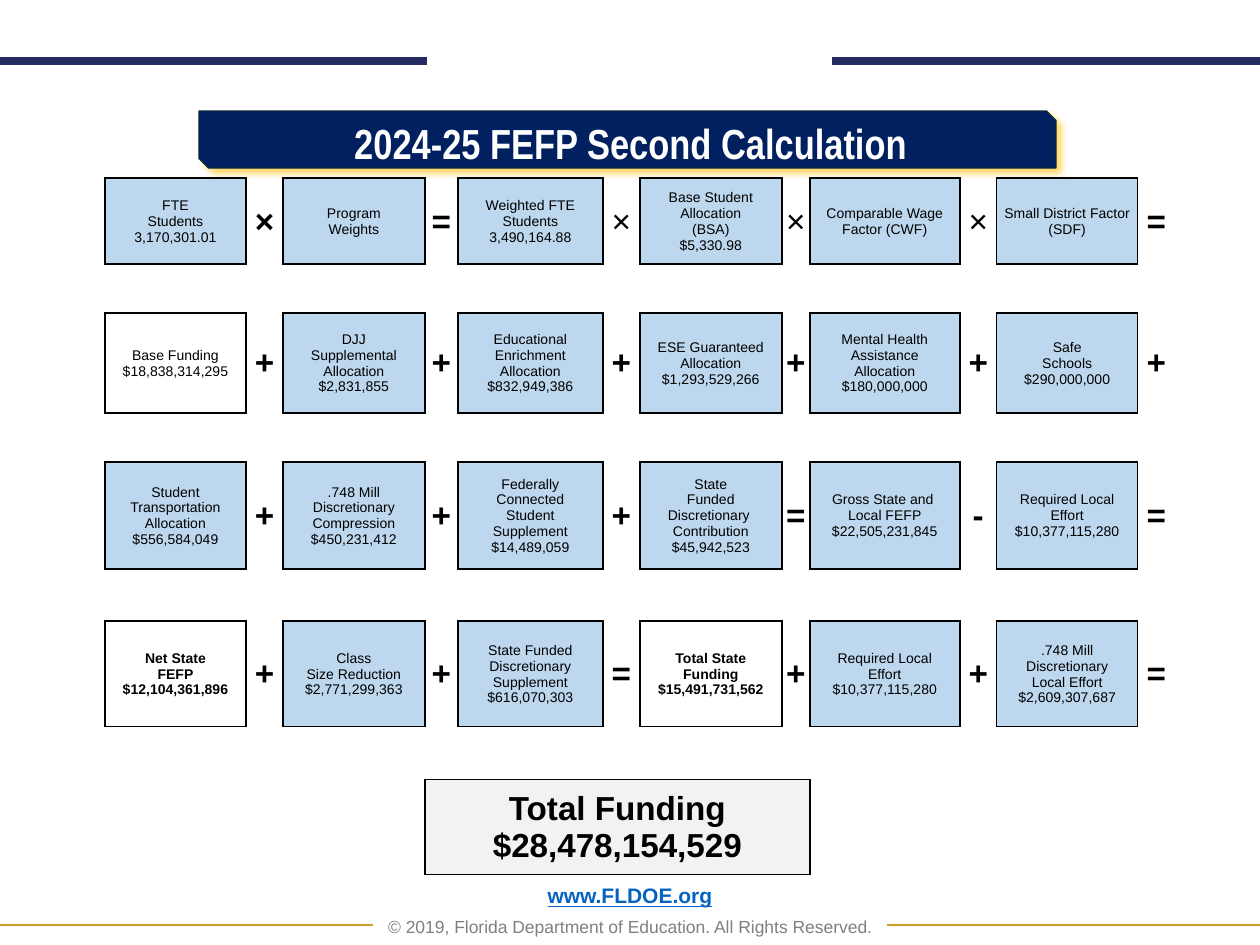
from lxml import etree
from pptx import Presentation
from pptx.dml.color import RGBColor
from pptx.enum.shapes import MSO_CONNECTOR, MSO_SHAPE
from pptx.enum.text import MSO_ANCHOR, PP_ALIGN
from pptx.oxml import parse_xml
from pptx.oxml.ns import nsdecls, qn
from pptx.util import Pt

STRAIGHT = MSO_CONNECTOR.STRAIGHT
BANNER = MSO_SHAPE.SNIP_2_DIAG_RECTANGLE
CENTER = PP_ALIGN.CENTER
TOP, MIDDLE, BOTTOM = MSO_ANCHOR.TOP, MSO_ANCHOR.MIDDLE, MSO_ANCHOR.BOTTOM
NO_GRID = "{2D5ABB26-0587-4C30-8999-92F81FD0307C}"

COLORS = {
    "black": "000000", "white": "FFFFFF", "blue": "BDD7EE", "total": "F2F2F2",
    "banner": "002060", "edge": "0F273D", "glow": "FFD966", "bar": "262A63",
    "gold": "CD9D2C", "link": "0563C1", "grey": "808080",
}

COL_W = [141, 37, 142, 33, 145, 37, 142, 28, 150, 37, 141, 37]
ROW_H = [86, 49, 100, 49, 107, 52, 106, 53, 95]
TOTAL_FIRST, TOTAL_LAST = 3, 7

# Boxes of each formula row, then the operator that follows each box.
# "\v" breaks a line, "\n" starts a paragraph.
FORMULA = [
    (["FTE\vStudents\v3,170,301.01", "Program\vWeights",
      "Weighted FTE\vStudents\v3,490,164.88",
      "Base Student\vAllocation\v(BSA)\v$5,330.98",
      "Comparable Wage Factor (CWF)", "Small District Factor (SDF)"], "×=×××="),
    (["Base Funding\n$18,838,314,295",
      "DJJ\nSupplemental\nAllocation\n$2,831,855",
      "Educational\nEnrichment\nAllocation\n$832,949,386",
      "ESE Guaranteed\nAllocation\n$1,293,529,266",
      "Mental Health\nAssistance\nAllocation\n$180,000,000",
      "Safe\nSchools\n$290,000,000"], "++++++"),
    (["Student Transportation\nAllocation\n$556,584,049",
      ".748 Mill\nDiscretionary\nCompression\n$450,231,412",
      "Federally\nConnected\nStudent\nSupplement\n$14,489,059",
      "State\nFunded\nDiscretionary \nContribution\n$45,942,523",
      "Gross State and \nLocal FEFP\n$22,505,231,845",
      "Required Local\nEffort\n$10,377,115,280"], "+++=-="),
    (["Net State\nFEFP\n$12,104,361,896",
      "Class\nSize Reduction\n$2,771,299,363",
      "State Funded\nDiscretionary\nSupplement\n$616,070,303",
      "Total State\nFunding\n$15,491,731,562",
      "Required Local\nEffort\n$10,377,115,280",
      ".748 Mill\nDiscretionary\nLocal Effort\n$2,609,307,687"], "++=++="),
]
WHITE_BOXES = {(1, 0), (3, 0), (3, 3)}
BOLD_BOXES = {(3, 0), (3, 3)}
LIGHT_OPERATORS = {(0, 2), (0, 3), (0, 4)}


def px(n):
    return round(n * 914400 / 126)


def rgb(name):
    return RGBColor.from_string(COLORS[name])


def add_run(p, text, size, color="black", bold=False, font="Arial"):
    r = p.add_run()
    r.text = text
    r.font.size, r.font.bold, r.font.name = Pt(size), bold, font
    r.font.color.rgb = rgb(color)
    return r


def add_text_box(s, x, y, w, h, anchor):
    tf = s.shapes.add_textbox(px(x), px(y), px(w), px(h)).text_frame
    tf.word_wrap = True
    tf.vertical_anchor = anchor
    return tf


def add_rules(s, y, left_end, right_start, color, weight):
    """Draw a rule from each slide edge, leaving a gap in the middle."""
    for start, end in ((left_end, 0), (1260, right_start)):
        line = s.shapes.add_connector(STRAIGHT, px(start), px(y), px(end), px(y))
        line.line.color.rgb = rgb(color)
        line.line.width = Pt(weight)
        etree.SubElement(line._element.spPr, qn("a:effectLst"))


def add_banner(s, x, y, w, h):
    sp = s.shapes.add_shape(BANNER, px(x), px(y), px(w), px(h))
    sp.fill.solid()
    sp.fill.fore_color.rgb = rgb("banner")
    sp.line.color.rgb = rgb("edge")
    sp.line.width = Pt(0.75)
    sp._element.spPr.append(parse_xml(
        f'<a:effectLst {nsdecls("a")}><a:outerShdw blurRad="{Pt(4)}" '
        f'dist="{Pt(3)}" dir="2700000" algn="tl" rotWithShape="0">'
        f'<a:srgbClr val="{COLORS["glow"]}"/></a:outerShdw></a:effectLst>'))
    p = add_text_box(s, x + 22, y, w - 38, h + 6, TOP).paragraphs[0]
    p.alignment = CENTER
    add_run(p, "2024-25 FEFP Second Calculation", 24, "white", True, "Arial Narrow")


def add_footer(s, x, y, w, h):
    tf = add_text_box(s, x, y, w, h, BOTTOM)
    p = tf.paragraphs[0]
    add_run(p, "www.FLDOE.org", 12, "link", True).font.underline = True
    p = tf.add_paragraph()
    p.space_before = Pt(6)
    add_run(p, "© 2019, Florida Department of Education. All Rights Reserved.",
            10, "grey")
    for p in tf.paragraphs:
        p.alignment = CENTER
        p.line_spacing = 0.9


def set_borders(cell, sides):
    tcPr = cell._tc.get_or_add_tcPr()
    for side in sides:
        tcPr.append(parse_xml(
            f'<a:ln{side} {nsdecls("a")} w="{Pt(1)}"><a:solidFill>'
            f'<a:srgbClr val="{COLORS["black"]}"/></a:solidFill></a:ln{side}>'))


def fill_cell(cell, text, size, bold, fill=None):
    for i, block in enumerate(text.split("\n")):
        p = cell.text_frame.add_paragraph() if i else cell.text_frame.paragraphs[0]
        p.alignment = CENTER
        for j, part in enumerate(block.split("\v")):
            if j:
                p.add_line_break()
            add_run(p, part, size, bold=bold)
    if fill:
        cell.fill.solid()
        cell.fill.fore_color.rgb = rgb(fill)


def add_formula_table(s, x, y):
    table = s.shapes.add_table(len(ROW_H), len(COL_W), px(x), px(y),
                               px(sum(COL_W)), px(sum(ROW_H))).table
    table.first_row = table.horz_banding = False
    table._tbl.tblPr.find(qn("a:tableStyleId")).text = NO_GRID
    for col, w in zip(table.columns, COL_W):
        col.width = px(w)
    for row, h in zip(table.rows, ROW_H):
        row.height = px(h)
    for cell in table.iter_cells():
        cell.margin_left = cell.margin_right = cell.margin_top = px(1)
        cell.margin_bottom = 0
        cell.vertical_anchor = MIDDLE
        cell.fill.background()

    for i, (boxes, operators) in enumerate(FORMULA):
        for j, (text, operator) in enumerate(zip(boxes, operators)):
            box = table.cell(2 * i, 2 * j)
            box._tc.tcPr.remove(box._tc.tcPr.find(qn("a:noFill")))
            set_borders(box, "LRTB")
            fill_cell(box, text, 8, (i, j) in BOLD_BOXES,
                      "white" if (i, j) in WHITE_BOXES else "blue")
            fill_cell(table.cell(2 * i, 2 * j + 1), operator, 19,
                      (i, j) not in LIGHT_OPERATORS)

    last = len(ROW_H) - 1
    table.cell(last, 0).merge(table.cell(last, TOTAL_FIRST - 1))
    total = table.cell(last, TOTAL_FIRST)
    total.merge(table.cell(last, TOTAL_LAST))
    for c in range(TOTAL_FIRST, TOTAL_LAST + 1):
        cell = table.cell(last, c)
        cell._tc.tcPr.remove(cell._tc.tcPr.find(qn("a:noFill")))
        set_borders(cell, {TOTAL_FIRST: "LTB", TOTAL_LAST: "RTB"}.get(c, "TB"))
    fill_cell(total, "Total Funding $28,478,154,529", 19, True, "total")


def main():
    prs = Presentation()
    prs.slide_width, prs.slide_height = px(1260), px(945)
    s = prs.slides.add_slide(prs.slide_layouts[6])
    add_footer(s, 87, 890, 1086, 54)
    add_rules(s, 61, 427, 832, "bar", 5)
    add_rules(s, 925, 373, 887, "gold", 1)
    add_banner(s, 199, 111, 857, 57)
    add_formula_table(s, 105, 178)
    prs.save("out.pptx")


if __name__ == "__main__":
    main()
